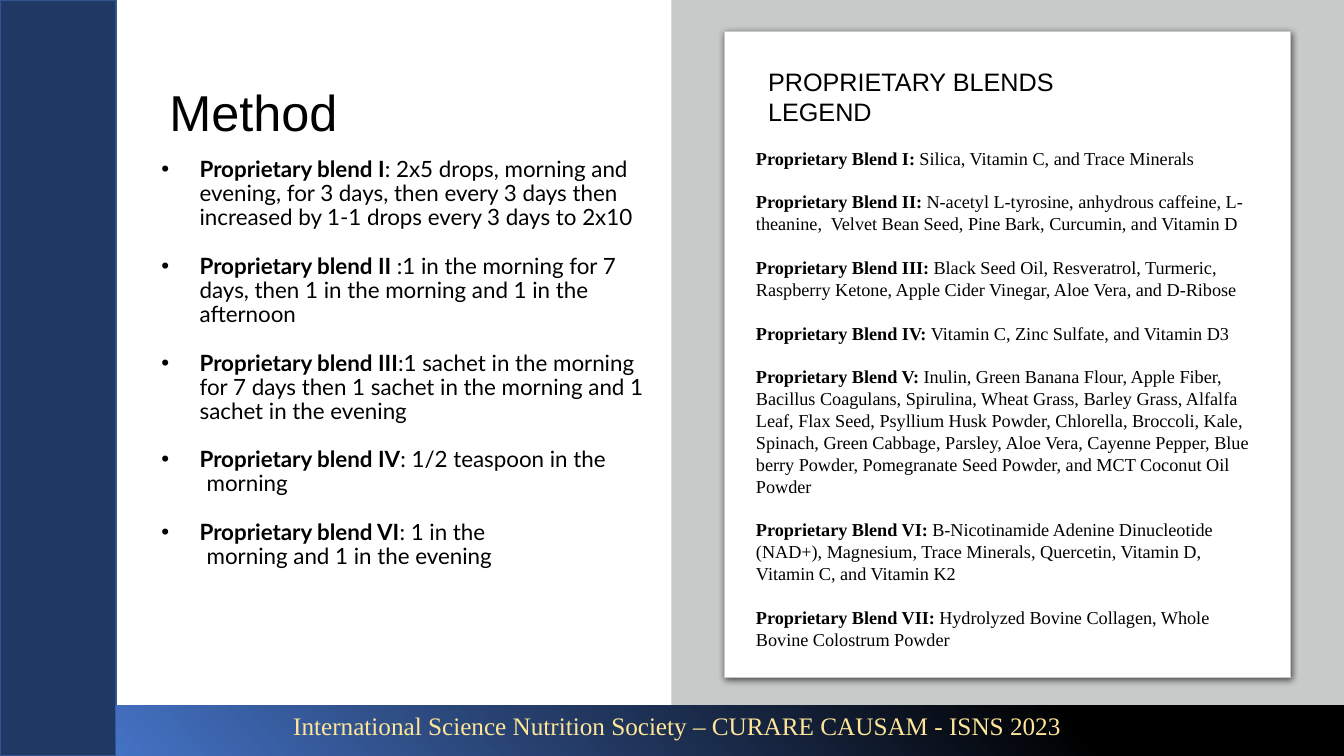
from lxml import etree
from pptx import Presentation
from pptx.dml.color import RGBColor
from pptx.enum.shapes import MSO_SHAPE
from pptx.enum.text import MSO_ANCHOR, MSO_AUTO_SIZE, PP_ALIGN
from pptx.oxml.ns import qn
from pptx.util import Inches, Pt

COLORS = {
    "text": "000000", "panel": "C8CACA", "card": "FFFFFF", "band": "1F3864",
    "band_edge": "31538F", "footer_start": "4472C4", "footer_end": "000000",
    "footer_text": "FEE599",
}

DOSES = [
    ("Proprietary blend I", ": 2x5 drops, morning and evening, for 3 days, then every "
     "3 days then increased by 1-1 drops every 3 days to 2x10", None),
    ("Proprietary blend II ", ":1 in the morning for 7 days, then 1 in the morning "
     "and 1 in the afternoon", None),
    ("Proprietary blend III", ":1 sachet in the morning for 7 days then 1 sachet in "
     "the morning and 1 sachet in the evening", None),
    ("Proprietary blend IV", ": 1/2 teaspoon in the", "morning"),
    ("Proprietary blend VI", ": 1 in the", "morning and 1 in the evening"),
]

INGREDIENTS = [
    ("I", "Silica, Vitamin C, and Trace Minerals"),
    ("II", "N-acetyl L-tyrosine, anhydrous caffeine, L-theanine,  Velvet Bean Seed, "
     "Pine Bark, Curcumin, and Vitamin D"),
    ("III", "Black Seed Oil, Resveratrol, Turmeric, Raspberry Ketone, Apple Cider "
     "Vinegar, Aloe Vera, and D-Ribose"),
    ("IV", "Vitamin C, Zinc Sulfate, and Vitamin D3"),
    ("V", "Inulin, Green Banana Flour, Apple Fiber, Bacillus Coagulans, Spirulina, "
     "Wheat Grass, Barley Grass, Alfalfa Leaf, Flax Seed, Psyllium Husk Powder, "
     "Chlorella, Broccoli, Kale, Spinach, Green Cabbage, Parsley, Aloe Vera, Cayenne "
     "Pepper, Blue berry Powder, Pomegranate Seed Powder, and MCT Coconut Oil Powder"),
    ("VI", "B-Nicotinamide Adenine Dinucleotide (NAD+), Magnesium, Trace Minerals, "
     "Quercetin, Vitamin D, Vitamin C, and Vitamin K2"),
    ("VII", "Hydrolyzed Bovine Collagen, Whole Bovine Colostrum Powder"),
]


def rgb(name):
    return RGBColor.from_string(COLORS[name])


class SlideBuilder:
    heading_font = "Arial"
    list_font = "Lato"
    serif_font = "Times New Roman"

    def __init__(self, slide):
        self.slide = slide

    def place(self, shape, box):
        shape.left, shape.top, shape.width, shape.height = map(Inches, box)

    def style(self, run, size, font, color="text", bold=False):
        run.font.size, run.font.name, run.font.bold = Pt(size), font, bold
        run.font.color.rgb = rgb(color)

    def labelled(self, paragraph, label, text, size, font):
        """Write a bold label followed by plain text."""
        for part, bold in ((label, True), (text, False)):
            run = paragraph.add_run()
            run.text = part
            self.style(run, size, font, bold=bold)

    def indent(self, paragraph, left, first, bullet):
        props = paragraph._p.get_or_add_pPr()
        props.set("marL", str(Inches(left)))
        props.set("indent", str(Inches(first)))
        if bullet:
            color = etree.SubElement(props, qn("a:buClr"))
            etree.SubElement(color, qn("a:srgbClr"), val=COLORS["text"])
            etree.SubElement(props, qn("a:buFont"), typeface="Arial")
            etree.SubElement(props, qn("a:buChar"), char="•")
        else:
            etree.SubElement(props, qn("a:buNone"))

    def title(self, text, box):
        heading = self.slide.shapes.title
        self.place(heading, box)
        frame = heading.text_frame
        frame.text = text
        frame.vertical_anchor = MSO_ANCHOR.MIDDLE
        frame.auto_size = MSO_AUTO_SIZE.NONE
        line = frame.paragraphs[0]
        line.alignment, line.line_spacing = PP_ALIGN.LEFT, 0.9
        self.style(line.runs[0], 36, self.heading_font)

    def dose_list(self, doses, box):
        body = self.slide.placeholders[1]
        self.place(body, box)
        frame = body.text_frame
        frame.auto_size = MSO_AUTO_SIZE.NONE
        for number, (label, dose, continuation) in enumerate(doses):
            item = frame.add_paragraph() if number else frame.paragraphs[0]
            self.indent(item, 0.5, -0.38, True)
            item.line_spacing = 0.9
            item.space_before = Pt(17.3 if number else 0)
            self.labelled(item, label, dose, 16, self.list_font)
            if continuation:
                rest = frame.add_paragraph()
                rest.text = continuation
                self.indent(rest, 0.57, 0, False)
                rest.line_spacing, rest.space_before = 0.9, Pt(0)
                self.style(rest.runs[0], 16, self.list_font)

    def block(self, box, fill=None, edge=None, width=1, kind=MSO_SHAPE.RECTANGLE):
        shape = self.slide.shapes.add_shape(kind, *map(Inches, box))
        shape.shadow.inherit = False
        if fill:
            shape.fill.solid()
            shape.fill.fore_color.rgb = rgb(fill)
        if edge:
            shape.line.color.rgb = rgb(edge)
            shape.line.width = Pt(width)
        else:
            shape.line.fill.background()
        return shape

    def card(self, box):
        """Draw a square-cornered panel with a soft shadow below it."""
        card = self.block(box, "card", "panel", 0.75, MSO_SHAPE.ROUNDED_RECTANGLE)
        card.adjustments[0] = 0
        effects = card._element.spPr.find(qn("a:effectLst"))
        shadow = etree.SubElement(effects, qn("a:outerShdw"), blurRad=str(Pt(4.5)),
                                  dist=str(Pt(1.5)), dir="5400000", rotWithShape="0")
        color = etree.SubElement(shadow, qn("a:srgbClr"), val=COLORS["text"])
        etree.SubElement(color, qn("a:alpha"), val="63000")

    def gradient_bar(self, box):
        bar = self.block(box)
        bar.fill.gradient()
        bar.fill.gradient_angle = 40
        start, end = bar.fill.gradient_stops
        start.color.rgb, start.position = rgb("footer_start"), 0
        end.color.rgb, end.position = rgb("footer_end"), 0.78

    def text_frame(self, box):
        frame = self.slide.shapes.add_textbox(*map(Inches, box)).text_frame
        frame.word_wrap = True
        return frame

    def caption(self, text, box, font, color="text"):
        frame = self.text_frame(box)
        frame.text = text
        self.style(frame.paragraphs[0].runs[0], 18, font, color)

    def legend(self, blends, box):
        frame = self.text_frame(box)
        for number, (numeral, contents) in enumerate(blends):
            entry = frame.add_paragraph() if number else frame.paragraphs[0]
            if number:
                entry.space_before = Pt(15.6)
            self.labelled(entry, f"Proprietary Blend {numeral}: ", contents,
                          13, self.serif_font)


def main():
    deck = Presentation()
    deck.slide_width, deck.slide_height = Inches(13.33), Inches(7.5)
    method = SlideBuilder(deck.slides.add_slide(deck.slide_layouts[1]))
    method.title("Method", (1.58, 0.26, 5.41, 1.77))
    method.dose_list(DOSES, (1.38, 1.52, 5.19, 4.88))
    method.block((6.66, 0, 6.67, 7.5), "panel")
    method.card((7.19, 0.31, 5.61, 6.41))
    method.block((0, 0, 1.15, 7.5), "band", "band_edge")
    method.caption("PROPRIETARY BLENDS LEGEND", (7.52, 0.61, 4.03, 0.4),
                   method.heading_font)
    method.gradient_bar((1.15, 7, 12.18, 0.5))
    method.caption("International Science Nutrition Society – CURARE CAUSAM - ISNS 2023",
                   (2.81, 7, 9.38, 0.4), method.serif_font, "footer_text")
    method.legend(INGREDIENTS, (7.4, 1.41, 5.1, 5.6))
    deck.save("out.pptx")


if __name__ == "__main__":
    main()
